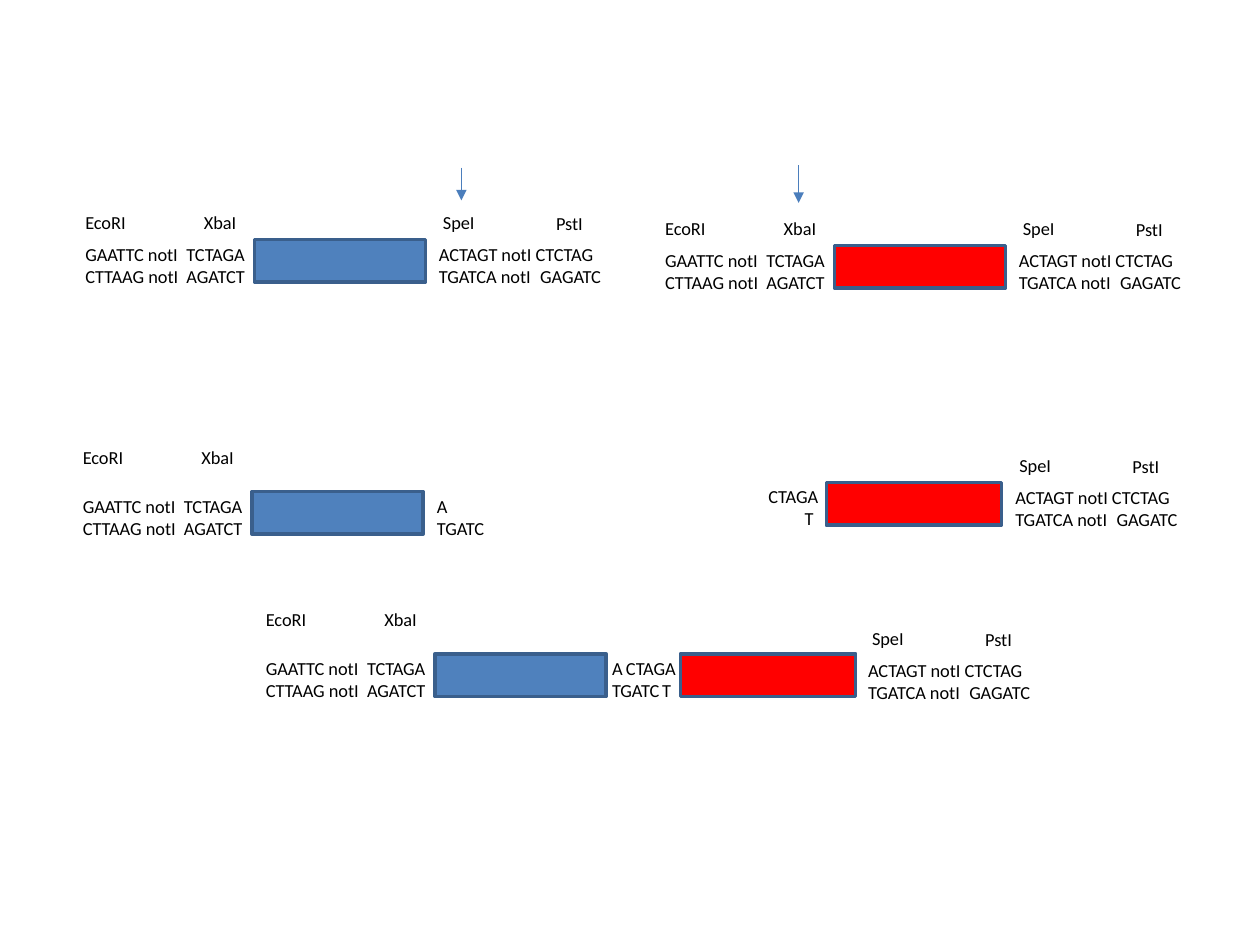
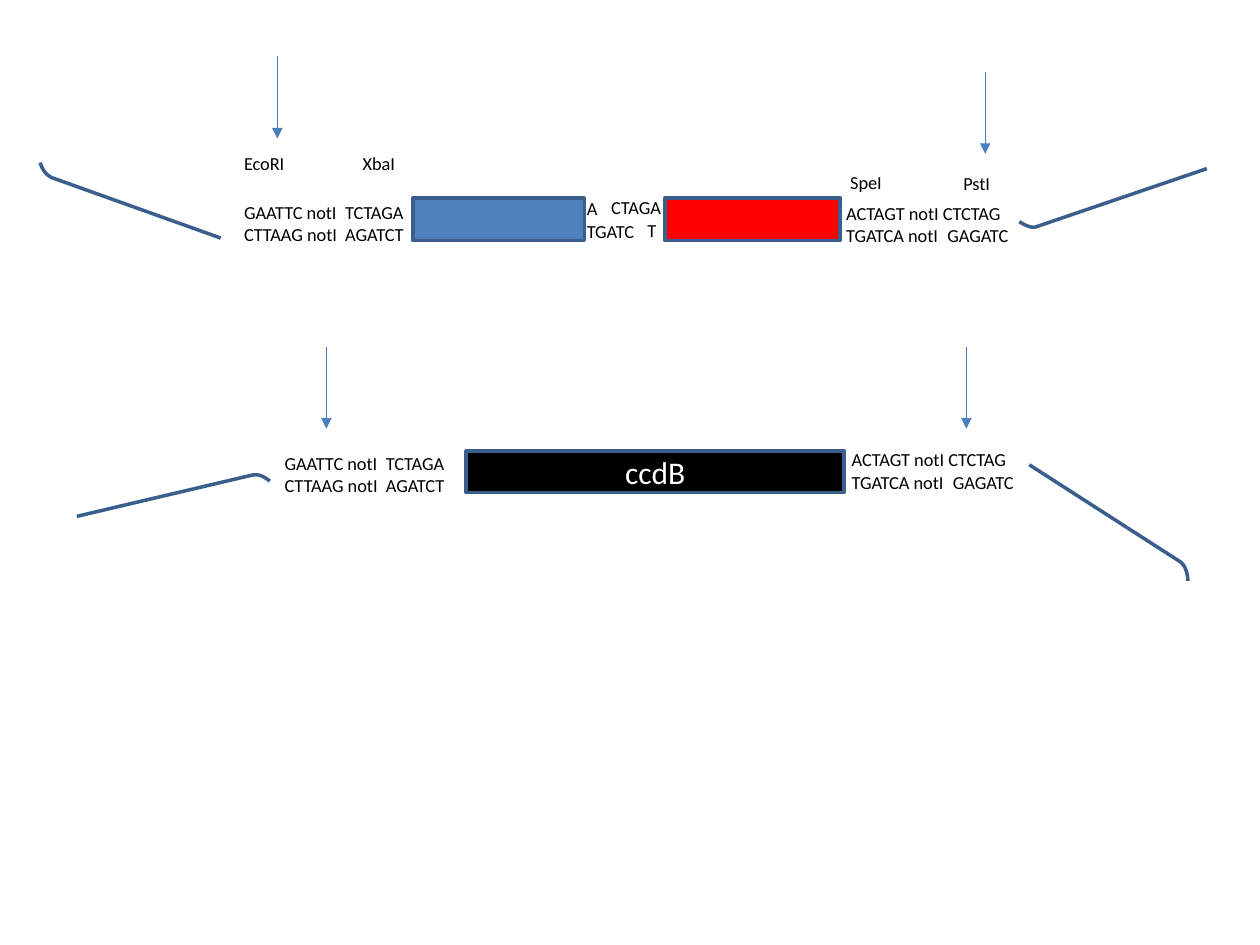
from lxml import etree
from pptx import Presentation
from pptx import util as u
from pptx.dml.color import RGBColor
from pptx.enum import shapes, text
from pptx.oxml import ns

Cm = u.Cm
BLUE, RED, BLACK, WHITE = "4F81BD", "FF0000", "000000", "FFFFFF"
OUTLINE, ARROW = "3A5F8C", "4B7EBC"
GENE_WIDTH, GENE_HEIGHT = 3.45, 0.86
SECOND_SITE = 2.04  # tab stop of the second recognition site
NEAR_LABELS, FAR_LABELS = 0.64, 0.99


def color(value):
    return RGBColor.from_string(value)


class Diagram:
    """Style and current slide; every length is in centimetres."""

    def __init__(self):
        self.deck = Presentation()
        self.deck.slide_width, self.deck.slide_height = Cm(25.4), Cm(19.05)

    def new_slide(self):
        self.shapes = self.deck.slides.add_slide(self.deck.slide_layouts[6]).shapes

    def set_text(self, frame, lines, size=10.5, ink=BLACK, align=text.PP_ALIGN.LEFT,
                 tab=None, last_indent=0):
        frame.word_wrap = True
        frame.text = "\n".join(lines)
        for paragraph in frame.paragraphs:
            paragraph.alignment = align
            font = paragraph.runs[0].font
            font.name, font.size = "Calibri", u.Pt(size)
            font.color.rgb = color(ink)
            if tab:
                stops = etree.SubElement(paragraph._p.get_or_add_pPr(), ns.qn("a:tabLst"))
                etree.SubElement(stops, ns.qn("a:tab"), pos=str(Cm(tab)), algn="l")
        if last_indent:
            frame.paragraphs[-1]._p.get_or_add_pPr().set("marL", str(Cm(last_indent)))

    def label(self, left, top, *lines, width=1.6, **style):
        box = self.shapes.add_textbox(Cm(left), Cm(top), Cm(width), Cm(0.35 + 0.4 * len(lines)))
        self.set_text(box.text_frame, lines, **style)

    def strands(self, left, top, *lines):
        self.label(left, top, *lines, width=3.9, tab=SECOND_SITE)

    def outline(self, shape):
        shape.shadow.inherit = False
        shape.line.color.rgb = color(OUTLINE)
        shape.line.width = u.Pt(2)

    def gene(self, left, top, fill, name=None, width=GENE_WIDTH, height=GENE_HEIGHT):
        box = self.shapes.add_shape(shapes.MSO_SHAPE.RECTANGLE,
                                    Cm(left), Cm(top), Cm(width), Cm(height))
        box.fill.solid()
        box.fill.fore_color.rgb = color(fill)
        self.outline(box)
        if name:
            box.text_frame.vertical_anchor = text.MSO_ANCHOR.MIDDLE
            self.set_text(box.text_frame, [name], size=18, ink=WHITE,
                          align=text.PP_ALIGN.CENTER)

    def cut_arrow(self, x, top, bottom):
        arrow = self.shapes.add_connector(shapes.MSO_CONNECTOR.STRAIGHT,
                                          Cm(x), Cm(top), Cm(x), Cm(bottom))
        arrow.line.color.rgb = color(ARROW)
        arrow.line.width = u.Pt(0.75)
        etree.SubElement(arrow.line._get_or_add_ln(), ns.qn("a:tailEnd"), type="triangle")
        etree.SubElement(arrow._element.spPr, ns.qn("a:effectLst"))

    def backbone(self, start, bend, corner, tip, steps=8):
        """Draw a straight run from start to bend, then a rounded hook to tip."""
        hook = []
        for step in range(steps + 1):
            t = step / steps
            hook.append(tuple(Cm((1 - t) ** 2 * b + 2 * t * (1 - t) * c + t * t * e)
                              for b, c, e in zip(bend, corner, tip)))
        outline = self.shapes.build_freeform(Cm(start[0]), Cm(start[1]))
        outline.add_line_segments(hook, close=False)
        curve = outline.convert_to_shape()
        curve.fill.background()
        self.outline(curve)

    def prefix(self, left, top, label_gap=None):
        self.strands(left, top, "GAATTC notI\tTCTAGA", "CTTAAG notI\tAGATCT")
        if label_gap:
            self.label(left, top - label_gap, "EcoRI")
            self.label(left + 2.39, top - label_gap, "XbaI")

    def suffix(self, left, top, labelled=True):
        self.strands(left, top, "ACTAGT notI CTCTAG", "TGATCA notI\tGAGATC")
        if labelled:
            self.label(left + 0.08, top - 0.64, "SpeI")
            self.label(left + 2.36, top - 0.62, "PstI")

    def whole_part(self, left, top, fill):
        self.prefix(left, top, NEAR_LABELS)
        self.gene(left + 3.66, top + 0.05, fill)
        self.suffix(left + 7.13, top)

    def upstream_part(self, left, top, overhang):
        """Draw the blue part, cut at SpeI, with its sticky end at overhang."""
        self.prefix(left, top, FAR_LABELS)
        self.gene(left + 3.66, top + 0.05, BLUE)
        self.label(*overhang, "A", "TGATC")

    def downstream_part(self, overhang, gene, suffix):
        """Draw the red part, cut at XbaI, from the positions of its pieces."""
        self.label(*overhang, "CTAGA", "T", last_indent=0.73)
        self.gene(*gene, RED, width=3.53)
        self.suffix(*suffix)


def draw_ligation(diagram):
    diagram.new_slide()
    diagram.whole_part(1.47, 4.78, BLUE)
    diagram.whole_part(13.16, 4.9, RED)
    diagram.cut_arrow(9.3, 3.38, 4.04)
    diagram.cut_arrow(16.1, 3.33, 4.09)
    diagram.upstream_part(1.42, 9.86, overhang=(8.56, 9.86))
    diagram.downstream_part((15.24, 9.65), (16.66, 9.73), (20.22, 9.68))
    diagram.upstream_part(5.11, 13.13, overhang=(12.09, 13.13))
    diagram.downstream_part((12.37, 13.13), (13.72, 13.18), (17.25, 13.16))


def draw_vector_transfer(diagram):
    diagram.new_slide()
    diagram.upstream_part(4.67, 3.94, overhang=(11.58, 3.86))
    diagram.downstream_part((12.07, 3.84), (13.41, 3.99), (16.81, 3.96))
    diagram.backbone((4.45, 4.8), (1.04, 3.58), (0.88, 3.5), (0.81, 3.28))
    diagram.backbone((24.33, 3.4), (20.9, 4.57), (20.78, 4.62), (20.55, 4.47))
    diagram.cut_arrow(5.59, 1.12, 2.79)
    diagram.cut_arrow(19.86, 1.45, 3.1)

    diagram.gene(9.4, 9.09, BLACK, name="ccdB", width=7.62, height=0.84)
    diagram.prefix(5.49, 8.99)
    diagram.suffix(16.92, 8.92, labelled=False)
    diagram.backbone((1.55, 10.41), (5.08, 9.58), (5.25, 9.54), (5.44, 9.7))
    diagram.backbone((20.75, 9.37), (23.8, 11.33), (23.93, 11.43), (23.95, 11.71))
    for x in (6.58, 19.48):
        diagram.cut_arrow(x, 6.99, 8.64)


def main():
    diagram = Diagram()
    draw_ligation(diagram)
    draw_vector_transfer(diagram)
    diagram.deck.save("out.pptx")


if __name__ == "__main__":
    main()
